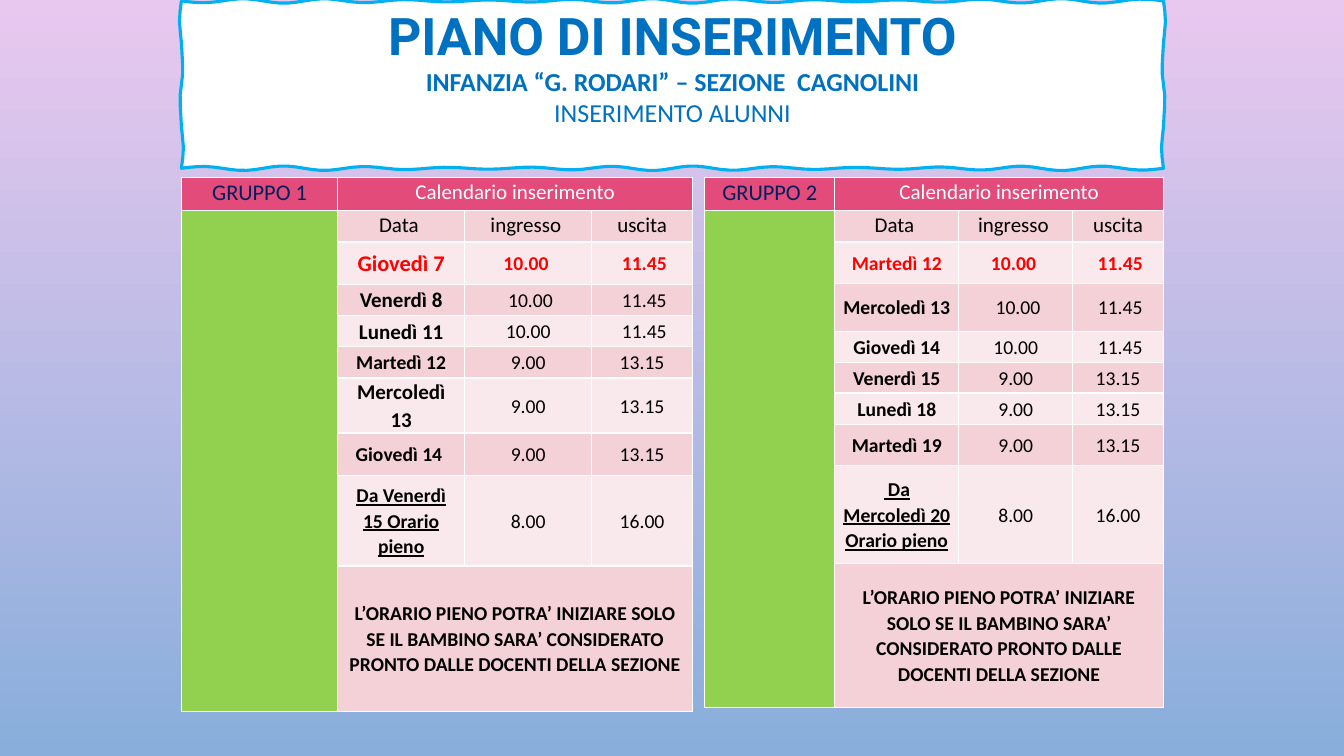
from math import pi, sin
from lxml import etree
from pptx import Presentation
from pptx.dml.color import RGBColor
from pptx.enum.text import MSO_ANCHOR, PP_ALIGN
from pptx.oxml.ns import qn
from pptx.util import Inches, Pt

WIDE, HIGH = Inches(13.33), Inches(7.5)
CENTER = PP_ALIGN.CENTER
TOP, MIDDLE = MSO_ANCHOR.TOP, MSO_ANCHOR.MIDDLE
ROSE, PINK, PALE, GREEN = "E34B7A", "F4D0D7", "FAE9EC", "92D050"
WHITE, BLACK, RED, NAVY, BLUE = "FFFFFF", "000000", "FF0000", "002060", "0070C0"
NOTE = ("L’ORARIO PIENO POTRA’ INIZIARE SOLO SE IL BAMBINO SARA’ "
        "CONSIDERATO PRONTO DALLE DOCENTI DELLA SEZIONE")
TIMES = [("10.00 ", " 11.45"), (" 10.00", " 11.45"), ("10.00", " 11.45"),
         ("9.00", "13.15"), ("9.00", "13.15"), ("9.00", "13.15"),
         ("8.00", "16.00")]
GROUPS = [
    dict(name="GRUPPO 1", left=13.5, wide=38.03, high=69.6,
         cols=[155, 126, 126, 100],
         rows=[33, 31, 42, 31, 31, 31, 47, 42, 90, 144],
         days=[("Giovedì 7", 16), ("Venerdì 8", 15), ("Lunedì 11", 15),
               ("Martedì 12", 14), ("Mercoledì 13", 15), ("Giovedì 14 ", 14),
               ("Da Venerdì 15 Orario pieno", 14)]),
    dict(name="GRUPPO 2", left=52.44, wide=34.13, high=70.13,
         cols=[129, 123, 113, 90],
         rows=[33, 31, 41, 48, 31, 30, 31, 41, 97, 143],
         days=[("Martedì 12", 14), ("Mercoledì 13", 14), ("Giovedì 14", 14),
               ("Venerdì 15", 14), ("Lunedì 18", 14), ("Martedì 19", 14),
               (" Da Mercoledì 20 Orario pieno", 14)]),
]


def rgb(code):
    return RGBColor.from_string(code)


def across(share):
    return round(WIDE * share / 100)


def down(share):
    return round(HIGH * share / 100)


def write(par, text, size, color, bold=False, line=False, face="Calibri"):
    par.text = text
    par.alignment = CENTER
    font = par.font
    font.name, font.size, font.bold = face, Pt(size), bold
    font.underline = line
    font.color.rgb = rgb(color)


def frame(cell):
    props = cell._tc.get_or_add_tcPr()
    for side in ("lnL", "lnR", "lnT", "lnB"):
        edge = etree.SubElement(props, qn("a:" + side), w=str(Pt(1)))
        fill = etree.SubElement(edge, qn("a:solidFill"))
        etree.SubElement(fill, qn("a:srgbClr"), val=WHITE)


def paint(cell, color):
    cell.fill.solid()
    cell.fill.fore_color.rgb = rgb(color)


def label(cell, text, size, color=BLACK, anchor=MIDDLE, **style):
    cell.vertical_anchor = anchor
    par = cell.text_frame.paragraphs[0]
    write(par, text, size, color, **style)
    par.line_spacing = 1.07


def split(lines, shares, total, attr):
    for line, share in zip(lines, shares):
        setattr(line, attr, round(total * share / sum(shares)))


def group(slide, name, left, wide, high, cols, rows, days):
    wide, high = across(wide), down(high)
    table = slide.shapes.add_table(len(rows), len(cols), across(left),
                                   down(23.47), wide, high).table
    table.first_row = table.horz_banding = False
    split(table.columns, cols, wide, "width")
    split(table.rows, rows, high, "height")
    for r in range(len(rows)):
        for c in range(len(cols)):
            cell = table.cell(r, c)
            cell.margin_left = cell.margin_right = across(0.6)
            cell.margin_top = cell.margin_bottom = 0
            frame(cell)
            band = PINK if r % 2 else PALE
            paint(cell, ROSE if r == 0 else GREEN if c == 0 else band)
    last = len(rows) - 1
    table.cell(0, 1).merge(table.cell(0, 3))
    table.cell(1, 0).merge(table.cell(last, 0))
    table.cell(last, 1).merge(table.cell(last, 3))
    label(table.cell(0, 0), name, 16, NAVY, TOP)
    label(table.cell(0, 1), "Calendario inserimento", 15, WHITE, TOP)
    for c, head in enumerate(("Data ", "ingresso ", "uscita"), 1):
        label(table.cell(1, c), head, 15, anchor=TOP)
    for r, ((day, size), times) in enumerate(zip(days, TIMES), 2):
        first = r == 2
        color = RED if first else BLACK
        label(table.cell(r, 1), day, size, color, bold=True,
              line=r == last - 1)
        for c, time in enumerate(times, 2):
            label(table.cell(r, c), time, 14, color, bold=first)
    label(table.cell(last, 1), NOTE, 14, bold=True)


def edge(start, end, count, waves):
    (x, y), (u, v) = start, end
    for i in range(count):
        t = i / count
        sway = sin(2 * pi * waves * t) * (0.7 + 0.3 * sin(5 * pi * t))
        dx, dy = (0, 0.3) if y == v else (0.15, 0)
        yield (across(x + (u - x) * t + dx * sway),
               down(y + (v - y) * t + dy * sway))


def banner(slide):
    left, right, top, base = 13.5, 86.57, 0.13, 22.27
    spots = [(left, top), (right, top), (right, base), (left, base)]
    points = []
    for i, spot in enumerate(spots):
        count, waves = (16, 2) if i % 2 else (120, 12)
        points += edge(spot, spots[(i + 1) % 4], count, waves)
    path = slide.shapes.build_freeform(*points[0])
    path.add_line_segments(points[1:], close=True)
    shape = path.convert_to_shape()
    shape.shadow.inherit = False
    paint(shape, WHITE)
    shape.line.color.rgb = rgb("00B0F0")
    shape.line.width = Pt(2.25)
    text = shape.text_frame
    text.word_wrap = True
    text.vertical_anchor = TOP
    write(text.paragraphs[0], "PIANO DI INSERIMENTO", 37, BLUE, True,
          face="Roboto")
    write(text.add_paragraph(), "INFANZIA “G. RODARI” – SEZIONE  CAGNOLINI",
          18.5, BLUE, True)
    write(text.add_paragraph(), "INSERIMENTO ALUNNI", 18.5, BLUE)


def sky(slide):
    fill = slide.background.fill
    fill.gradient()
    fill.gradient_angle = 270
    for stop, color in zip(fill.gradient_stops, ("E9C8EF", "89AEDB")):
        stop.color.rgb = rgb(color)


def main():
    deck = Presentation()
    deck.slide_width, deck.slide_height = WIDE, HIGH
    slide = deck.slides.add_slide(deck.slide_layouts[6])
    sky(slide)
    banner(slide)
    for data in GROUPS:
        group(slide, **data)
    deck.save("out.pptx")


if __name__ == "__main__":
    main()
